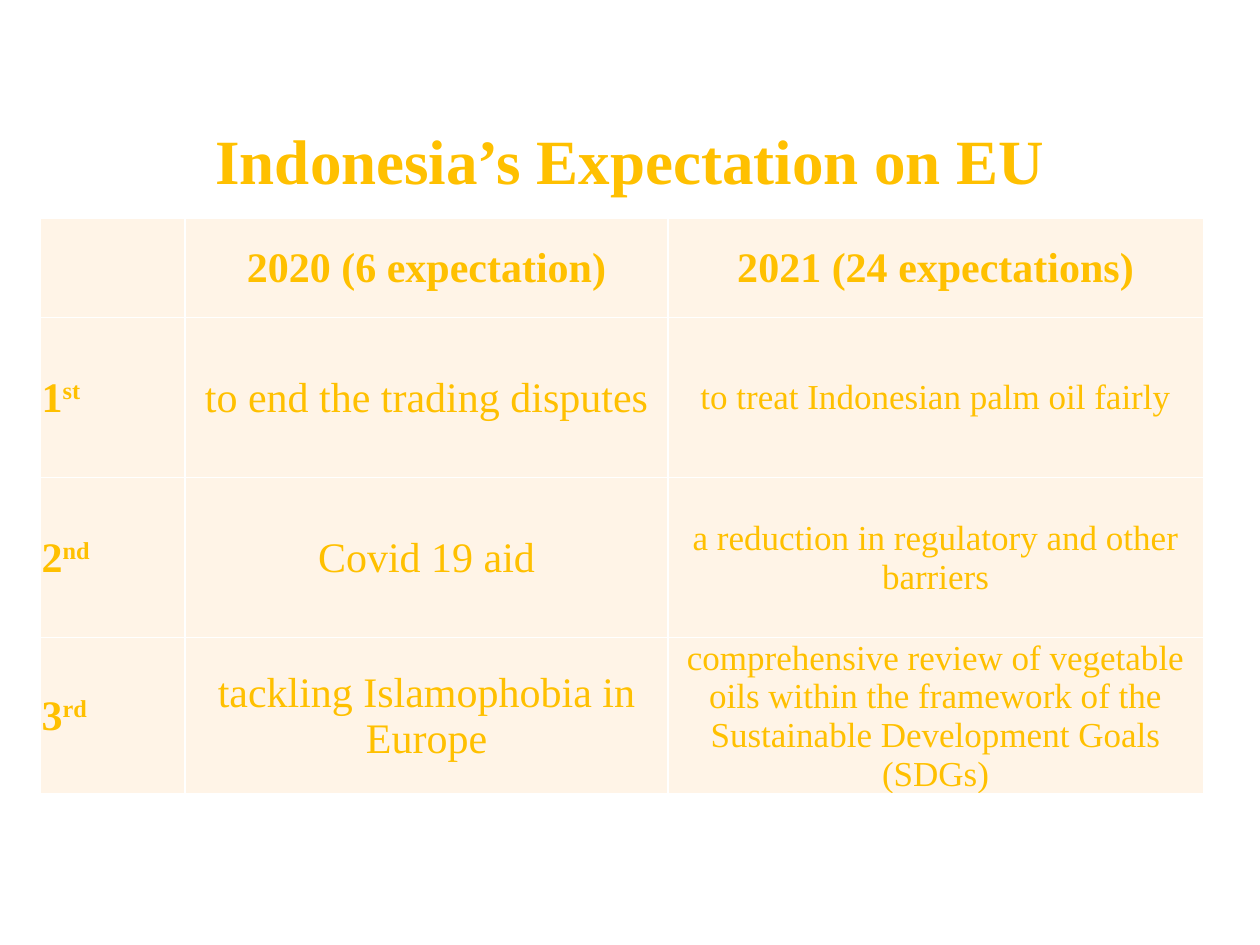
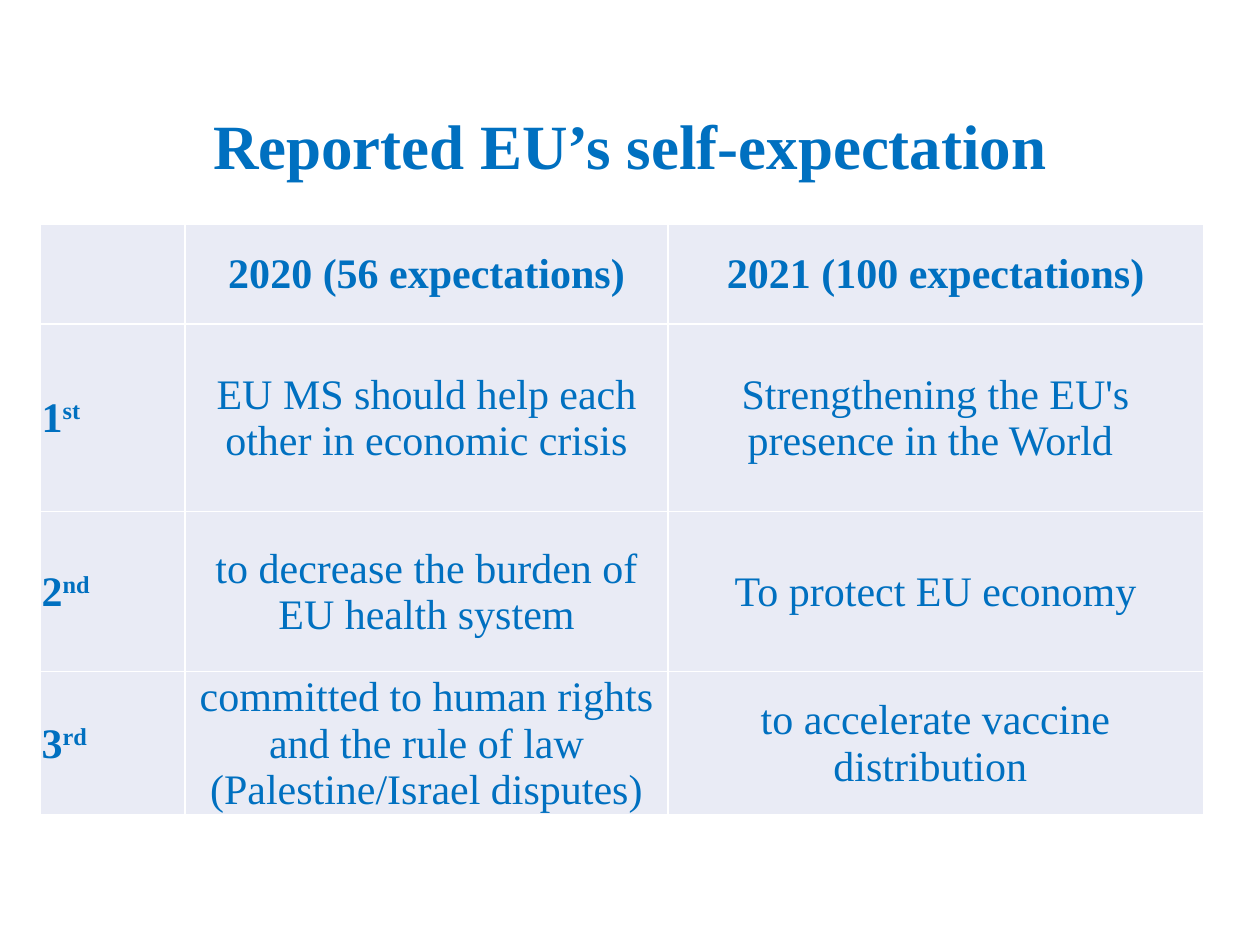
from lxml import etree
from pptx import Presentation
from pptx.dml.color import RGBColor
from pptx.enum import text
from pptx.oxml import ns
from pptx.util import Inches, Pt

FONT = "Times New Roman"
WHITE = "FFFFFF"
LEFT = 0.32
COLUMN_WIDTHS = (1.15, 3.83, 4.25)
RANKS = (("1", "st"), ("2", "nd"), ("3", "rd"))
CELL_FORMAT = {
    "margin_left": Inches(0.01),
    "margin_right": Inches(0.01),
    "margin_top": Inches(0.01),
    "margin_bottom": 0,
    "vertical_anchor": text.MSO_ANCHOR.MIDDLE,
}

EXPECTATIONS = (
    {
        "title": "Indonesia’s Expectation on EU",
        "title_top": 0.83,
        "table_top": 1.73,
        "row_heights": (0.79, 1.27, 1.27, 1.24),
        "color": "FFC000",
        "fill": "FFF4E7",
        "sizes": (24, 20),
        "headers": ("2020 (6 expectation)", "2021 (24 expectations)"),
        "rows": (
            ("to end the trading disputes", "to treat Indonesian palm oil fairly"),
            ("Covid 19 aid", "a reduction in regulatory and other barriers"),
            ("tackling Islamophobia in Europe",
             "comprehensive review of vegetable oils within the framework of the "
             "Sustainable Development Goals (SDGs)"),
        ),
    },
    {
        "title": "Reported EU’s self-expectation",
        "title_top": 0.71,
        "table_top": 1.78,
        "row_heights": (0.79, 1.49, 1.27, 1.14),
        "color": "0070C0",
        "fill": "E9EBF5",
        "sizes": (24, 24),
        "headers": ("2020 (56 expectations)", "2021 (100 expectations)"),
        "rows": (
            ("EU MS should help each other in economic crisis",
             "Strengthening the EU's presence in the World "),
            ("to decrease the burden of EU health system", "To protect EU economy"),
            ("committed to human rights and the rule of law (Palestine/Israel disputes)",
             "to accelerate vaccine distribution "),
        ),
    },
)


def rgb(value):
    return RGBColor.from_string(value)


def set_format(target, values):
    for name, value in values.items():
        setattr(target, name, value)


def add_run(paragraph, words, color, size, bold=False, raised=False):
    run = paragraph.add_run()
    run.text = words
    set_format(run.font, {"name": FONT, "size": Pt(size), "bold": bold})
    run.font.color.rgb = rgb(color)
    if raised:
        run.font._element.set("baseline", "30000")


def add_title(slide, content):
    title = slide.shapes.title
    set_format(title, {
        "left": Inches(LEFT), "top": Inches(content["title_top"]),
        "width": Inches(9.36), "height": Inches(0.95),
    })
    title.text_frame.vertical_anchor = text.MSO_ANCHOR.MIDDLE
    paragraph = title.text_frame.paragraphs[0]
    set_format(paragraph, {"alignment": text.PP_ALIGN.CENTER, "line_spacing": 0.9})
    add_run(paragraph, content["title"], content["color"], 36, bold=True)


def add_borders(cell):
    properties = cell._tc.get_or_add_tcPr()
    for side in ("lnL", "lnR", "lnT", "lnB"):
        line = etree.SubElement(properties, ns.qn(f"a:{side}"), w=str(Pt(1)))
        solid = etree.SubElement(line, ns.qn("a:solidFill"))
        etree.SubElement(solid, ns.qn("a:srgbClr"), val=WHITE)


def style_cell(cell, fill):
    set_format(cell, CELL_FORMAT)
    add_borders(cell)
    cell.fill.solid()
    cell.fill.fore_color.rgb = rgb(fill)


def add_centred_text(cell, words, color, size, bold=False):
    paragraph = cell.text_frame.paragraphs[0]
    paragraph.alignment = text.PP_ALIGN.CENTER
    add_run(paragraph, words, color, size, bold)


def add_rank(cell, number, suffix, color):
    paragraph = cell.text_frame.paragraphs[0]
    add_run(paragraph, number, color, 24, bold=True)
    add_run(paragraph, suffix, color, 24, bold=True, raised=True)


def add_expectation_table(slide, content):
    heights = content["row_heights"]
    table = slide.shapes.add_table(
        len(heights), len(COLUMN_WIDTHS), Inches(LEFT), Inches(content["table_top"]),
        Inches(sum(COLUMN_WIDTHS)), Inches(sum(heights))).table
    set_format(table, {"first_row": False, "horz_banding": False})
    for column, width in zip(table.columns, COLUMN_WIDTHS):
        column.width = Inches(width)
    for row, height in zip(table.rows, heights):
        row.height = Inches(height)
    for cell in table.iter_cells():
        style_cell(cell, content["fill"])

    color = content["color"]
    for column, header in enumerate(content["headers"], 1):
        add_centred_text(table.cell(0, column), header, color, 24, bold=True)
    for row, (rank, answers) in enumerate(zip(RANKS, content["rows"]), 1):
        add_rank(table.cell(row, 0), *rank, color)
        for column, (answer, size) in enumerate(zip(answers, content["sizes"]), 1):
            add_centred_text(table.cell(row, column), answer, color, size)


def main():
    presentation = Presentation()
    set_format(presentation, {"slide_width": Inches(10), "slide_height": Inches(7.5)})
    for content in EXPECTATIONS:
        slide = presentation.slides.add_slide(presentation.slide_layouts[5])
        add_title(slide, content)
        add_expectation_table(slide, content)
    presentation.save("out.pptx")


if __name__ == "__main__":
    main()
